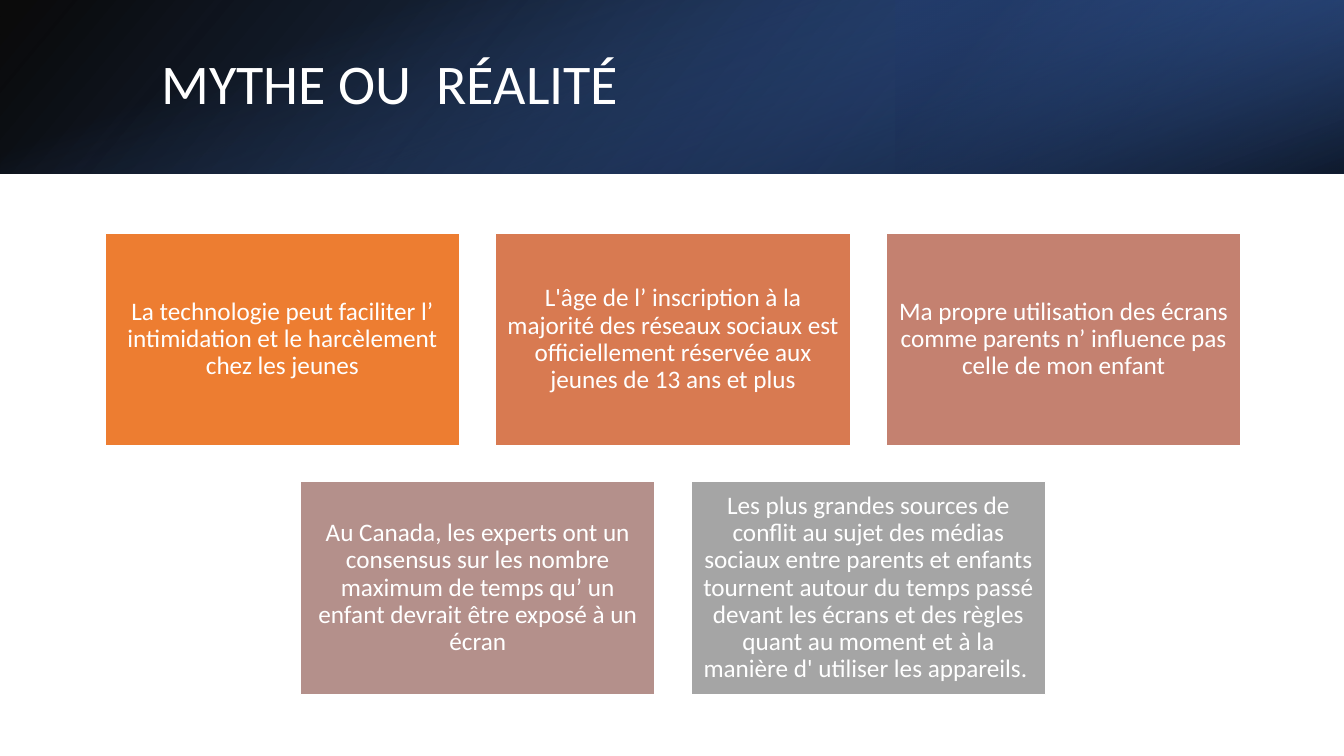
from lxml.etree import SubElement
from pptx import Presentation
from pptx.dml.color import RGBColor
from pptx.enum.shapes import MSO_SHAPE
from pptx.enum.text import MSO_ANCHOR, PP_ALIGN
from pptx.oxml.ns import qn
from pptx.util import Pt

COLORS = {
    "white": "FFFFFF", "black": "000000", "blue": "4472C4",
    "deep": "2F5597", "navy": "203864", "orange": "ED7D31",
    "rust": "D87A51", "rose": "C48170", "mauve": "B4908B", "gray": "A5A5A5",
}


def color(name):
    return RGBColor.from_string(COLORS[name])


def add_box(left, top, width, height):
    box = slide.shapes.add_shape(
        MSO_SHAPE.RECTANGLE, Pt(left), Pt(top), Pt(width), Pt(height))
    box.shadow.inherit = False
    return box


deck = Presentation()
deck.slide_width, deck.slide_height = Pt(960), Pt(540)
slide = deck.slides.add_slide(deck.slide_layouts[5])

BAND = 124
side = (960 - BAND) / 2
layers = [
    ((0, 0, 960, BAND), 0, True, 140,
     [(0, "black", 96), (100, "deep", 96)]),
    ((640, 0, 320, BAND), 180, True, 320,
     [(19, "navy", 68), (100, "blue", 79)]),
    ((side, -side, BAND, 960), 90, False, 340,
     [(23, "blue", 0), (99, "black", 74)]),
]
layers[0][4][1] = (100, "deep", 100)
for frame, turn, flip, angle, stops in layers:
    band = add_box(*frame)
    band.rotation = turn
    props = band.element.spPr
    if flip:
        props.xfrm.set("flipH", "1")
    band.line.fill.background()
    band.fill.gradient()
    band.fill.gradient_angle = 360 - angle
    for stop, (place, name, alpha) in zip(band.fill.gradient_stops, stops):
        stop.position = place / 100
        stop.color.rgb = color(name)
    for node, (place, name, alpha) in zip(props.iter(qn("a:srgbClr")), stops):
        SubElement(node, qn("a:alpha"), val=str(alpha * 1000))

title = slide.shapes.title
slide.shapes.element.append(title.element)
title.left, title.top, title.width, title.height = (
    Pt(108), Pt(27), Pt(790.5), Pt(69))
title.text_frame.text = "MYTHE OU  RÉALITÉ"
title.text_frame.vertical_anchor = MSO_ANCHOR.MIDDLE
head = title.text_frame.paragraphs[0]
head.alignment = PP_ALIGN.LEFT
head.line_spacing = 0.9
head.font.name, head.font.size = "Calibri", Pt(40)
head.font.color.rgb = color("white")

WIDTH, HEIGHT, GAP = 253.5, 152, 25.5
LEFT, TOP = 75, 166.5
rows = [
    [("orange", "La technologie peut faciliter l’ intimidation et le "
      "harcèlement chez les jeunes"),
     ("rust", "L'âge de l’ inscription à la majorité des réseaux sociaux est "
      "officiellement réservée aux jeunes de 13 ans et plus"),
     ("rose", "Ma propre utilisation des écrans comme parents n’ influence "
      "pas celle de mon enfant")],
    [("mauve", "Au Canada, les experts ont un consensus sur les nombre "
      "maximum de temps qu’ un enfant devrait être exposé à un écran"),
     ("gray", "Les plus grandes sources de conflit au sujet des médias "
      "sociaux entre parents et enfants tournent autour du temps passé "
      "devant les écrans et des règles quant au moment et à la manière "
      "d' utiliser les appareils. ")],
]
for row, cards in enumerate(rows):
    start = LEFT + (3 - len(cards)) * (WIDTH + GAP) / 2
    for col, (name, words) in enumerate(cards):
        card = add_box(start + col * (WIDTH + GAP),
                       TOP + row * (HEIGHT + GAP), WIDTH, HEIGHT)
        card.fill.solid()
        card.fill.fore_color.rgb = color(name)
        card.line.color.rgb = color("white")
        card.line.width = Pt(1)
        frame = card.text_frame
        frame.word_wrap = True
        frame.vertical_anchor = MSO_ANCHOR.MIDDLE
        frame.margin_left = frame.margin_right = Pt(5)
        frame.margin_top = frame.margin_bottom = Pt(5)
        frame.text = words
        para = frame.paragraphs[0]
        para.alignment = PP_ALIGN.CENTER
        para.line_spacing = 0.9
        para.font.name, para.font.size = "Calibri", Pt(18)
        para.font.color.rgb = color("white")

deck.save("out.pptx")
